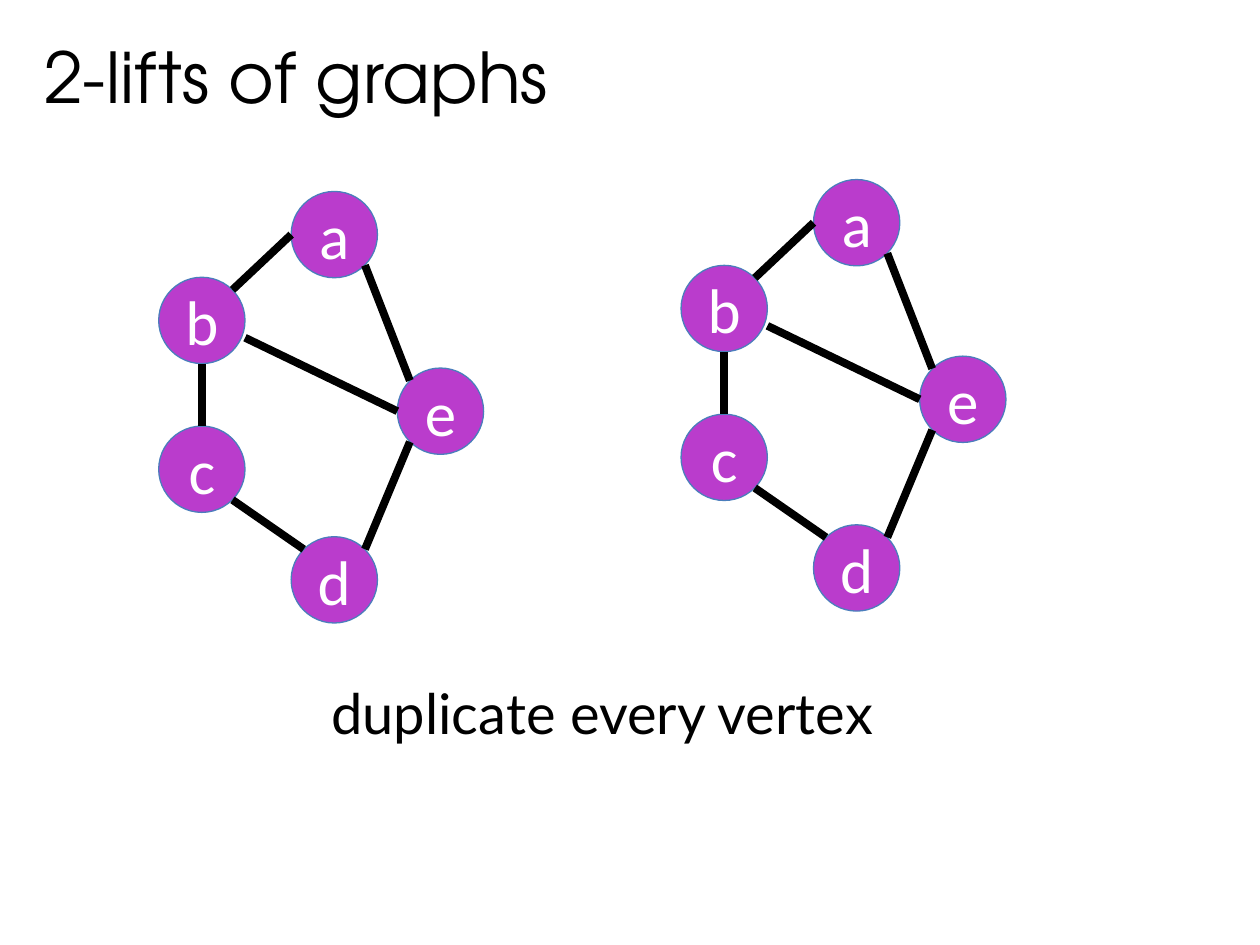
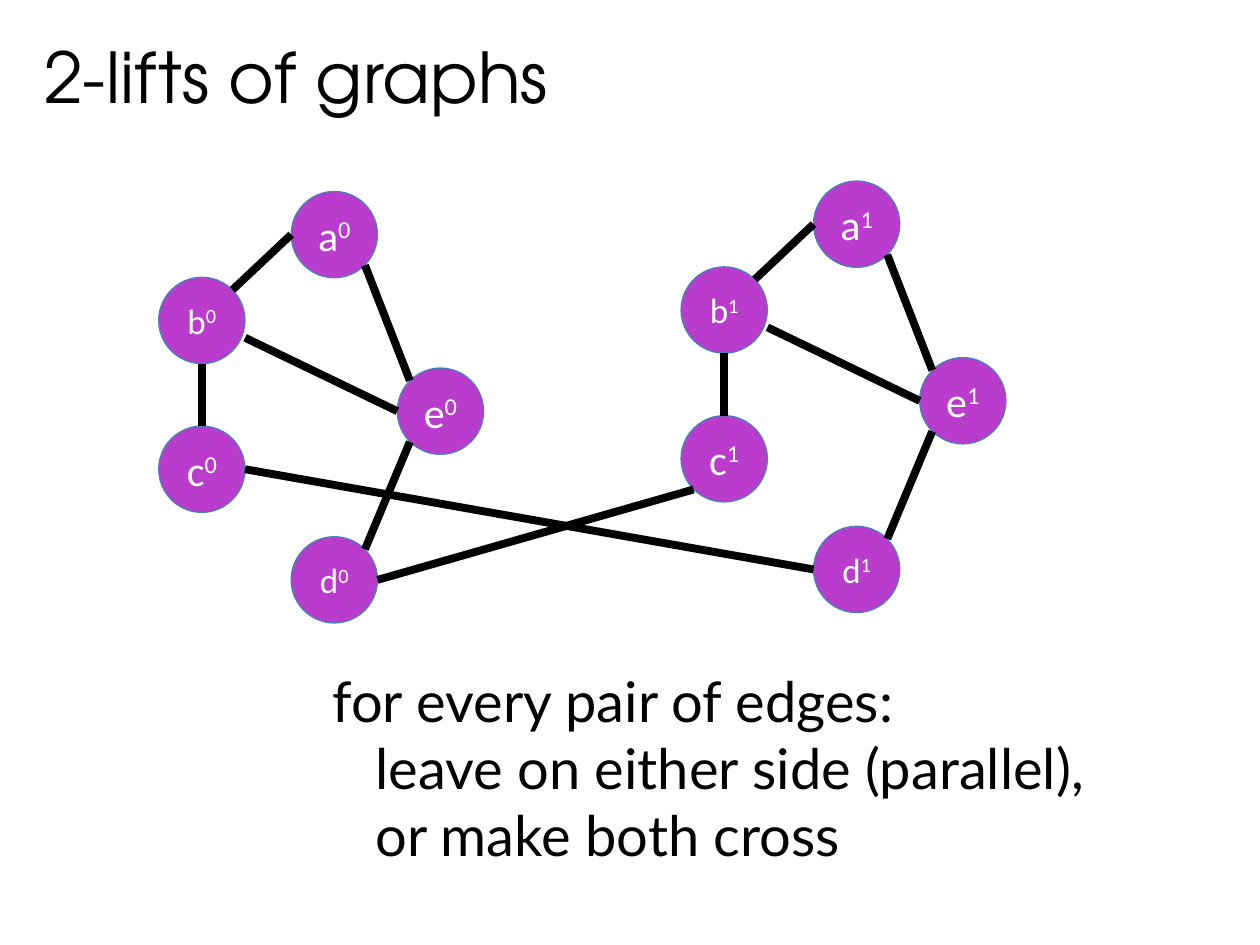
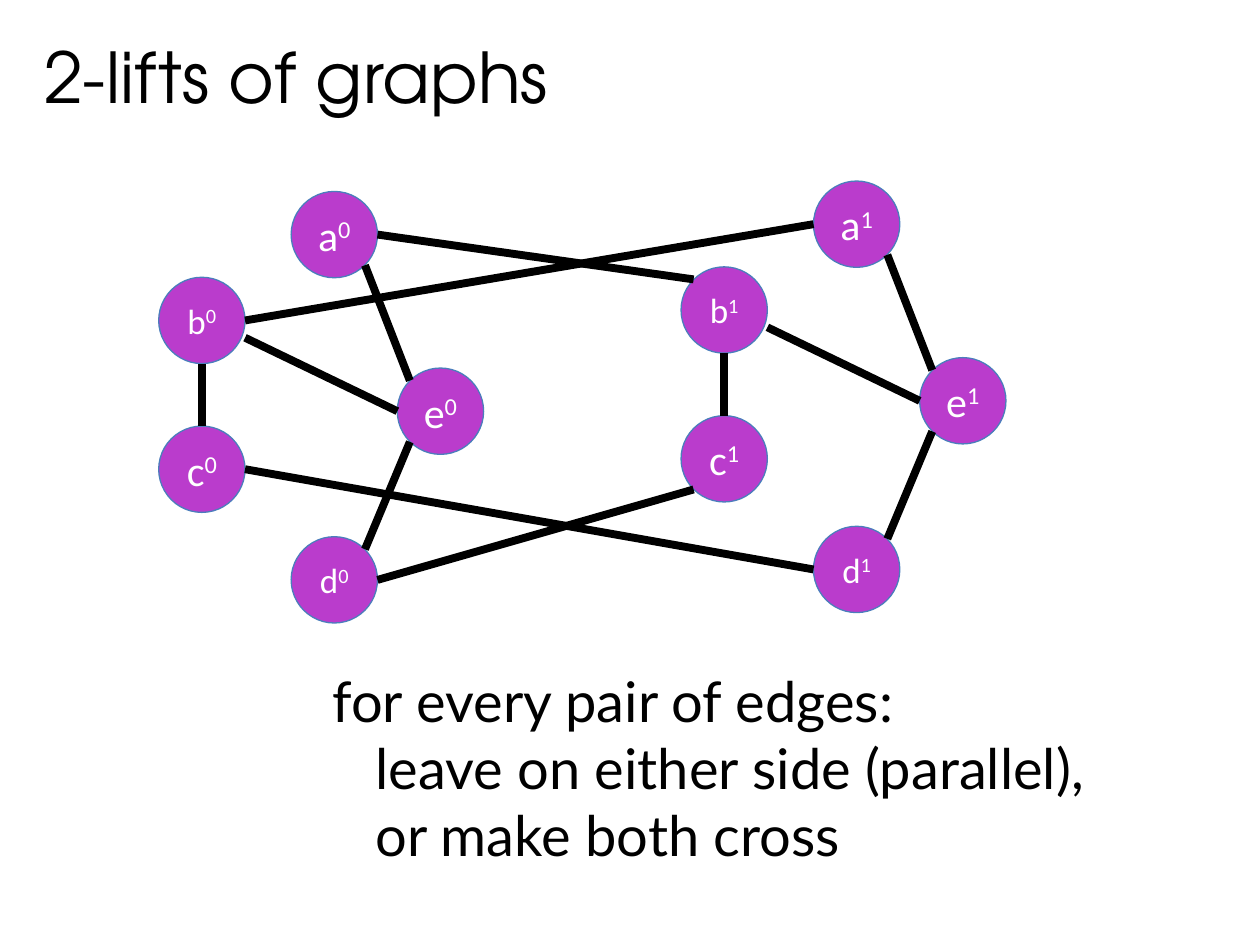
from dataclasses import dataclass

from lxml import etree
from pptx import Presentation
from pptx.dml.color import RGBColor
from pptx.enum.shapes import MSO_CONNECTOR, MSO_SHAPE
from pptx.enum.text import MSO_ANCHOR, MSO_AUTO_SIZE, PP_ALIGN
from pptx.oxml.ns import qn
from pptx.util import Cm, Pt

STRAIGHT = MSO_CONNECTOR.STRAIGHT
ELLIPSE = MSO_SHAPE.OVAL
MIDDLE = MSO_ANCHOR.MIDDLE
CENTER = PP_ALIGN.CENTER
FIT_TEXT = MSO_AUTO_SIZE.SHAPE_TO_FIT_TEXT

BLACK = RGBColor(0x00, 0x00, 0x00)
WHITE = RGBColor(0xFF, 0xFF, 0xFF)
PURPLE = RGBColor(0xBA, 0x3C, 0xCC)
BLUE = RGBColor(0x4B, 0x7E, 0xBC)

TITLE_FORMAT = {"name": "TeX Gyre Adventor", "size": Pt(40)}
CAPTION_FORMAT = {"name": "Lato", "size": Pt(32)}

DIAMETER = 1.74
RADIUS = DIAMETER / 2
CAPTION_INDENT = Cm(0.87)
COPY_SHIFT = 10.53

DIAGONAL = 0.71
TOP, BOTTOM, LEFT, RIGHT = (0, -1), (0, 1), (-1, 0), (1, 0)
UPPER_LEFT, UPPER_RIGHT = (-DIAGONAL, -DIAGONAL), (DIAGONAL, -DIAGONAL)
LOWER_LEFT, LOWER_RIGHT = (-DIAGONAL, DIAGONAL), (DIAGONAL, DIAGONAL)
RIGHT_BELOW_CENTER = (1, 0.4)


@dataclass(frozen=True)
class Vertex:
    left: float
    top: float
    indexed_size: int


@dataclass(frozen=True)
class Port:
    vertex: str
    side: tuple[float, float]


@dataclass(frozen=True)
class Edge:
    start: Port
    end: Port


@dataclass(frozen=True)
class GraphCopy:
    index: str
    dx: float = 0
    dy: float = 0


@dataclass(frozen=True)
class Crossing:
    from_second: Edge
    from_first: Edge


@dataclass(frozen=True)
class Caption:
    left: float
    top: float
    width: float
    height: float
    lines: tuple[str, ...]


@dataclass(frozen=True)
class LiftPage:
    copies: tuple[GraphCopy, GraphCopy]
    crossed: tuple[str, ...]
    caption: Caption


VERTICES = {
    "a": Vertex(5.87, 3.86, 24),
    "c": Vertex(3.2, 8.59, 24),
    "d": Vertex(5.87, 10.82, 20),
    "e": Vertex(8.01, 7.42, 24),
    "b": Vertex(3.2, 5.59, 20),
}

EDGES = {
    "ab": Edge(Port("a", LEFT), Port("b", UPPER_RIGHT)),
    "de": Edge(Port("e", LOWER_LEFT), Port("d", UPPER_RIGHT)),
    "ae": Edge(Port("a", LOWER_RIGHT), Port("e", UPPER_LEFT)),
    "bc": Edge(Port("c", TOP), Port("b", BOTTOM)),
    "cd": Edge(Port("d", UPPER_LEFT), Port("c", LOWER_RIGHT)),
    "be": Edge(Port("e", LEFT), Port("b", RIGHT_BELOW_CENTER)),
}

CROSSINGS = {
    "ab": Crossing(
        from_second=Edge(Port("a", LEFT), Port("b", RIGHT)),
        from_first=Edge(Port("a", RIGHT), Port("b", UPPER_LEFT)),
    ),
    "cd": Crossing(
        from_second=Edge(Port("d", LEFT), Port("c", RIGHT)),
        from_first=Edge(Port("d", RIGHT), Port("c", LOWER_LEFT)),
    ),
}

TITLE = Caption(0.64, 0.56, 11.38, 1.96, ("2-lifts of graphs",))
DUPLICATE = Caption(6.43, 13.56, 11.73, 1.63, ("duplicate every vertex",))
PAIRS = Caption(
    6.45, 13.31, 16.36, 4.37,
    ("for every pair of edges:", "leave on either side (parallel),", "or make both cross"),
)

PLAIN = (GraphCopy(""), GraphCopy("", COPY_SHIFT, -0.24))
INDEXED = (GraphCopy("0"), GraphCopy("1", COPY_SHIFT, -0.21))

PAGES = (
    LiftPage(PLAIN, (), DUPLICATE),
    LiftPage(INDEXED, ("cd",), PAIRS),
    LiftPage(INDEXED, ("ab", "cd"), PAIRS),
)


def add_span(para, text: str, color: RGBColor, formats: dict):
    span = para.add_run()
    span.text = text
    for name, value in formats.items():
        setattr(span.font, name, value)
    span.font.color.rgb = color
    return span


def add_caption(page, caption: Caption, formats: dict) -> None:
    place = (caption.left, caption.top, caption.width, caption.height)
    box = page.shapes.add_textbox(*map(Cm, place))
    frame = box.text_frame
    frame.word_wrap = False
    frame.auto_size = FIT_TEXT
    for number, line in enumerate(caption.lines):
        para = frame.add_paragraph() if number else frame.paragraphs[0]
        if number:
            para._p.get_or_add_pPr().set("marL", str(CAPTION_INDENT))
        add_span(para, line, BLACK, formats)


def add_vertex(shapes, name: str, vertex: Vertex, graph: GraphCopy) -> None:
    circle = shapes.add_shape(
        ELLIPSE,
        Cm(vertex.left + graph.dx), Cm(vertex.top + graph.dy),
        Cm(DIAMETER), Cm(DIAMETER),
    )
    circle.shadow.inherit = False
    circle.fill.solid()
    circle.fill.fore_color.rgb = PURPLE
    circle.line.color.rgb = BLUE
    circle.line.width = Pt(0.75)
    frame = circle.text_frame
    frame.word_wrap = False
    frame.vertical_anchor = MIDDLE
    para = frame.paragraphs[0]
    para.alignment = CENTER
    size = vertex.indexed_size if graph.index else 36
    formats = {"name": "Calibri", "size": Pt(size)}
    add_span(para, name, WHITE, formats)
    if graph.index:
        span = add_span(para, graph.index, WHITE, formats)
        span._r.get_or_add_rPr().set("baseline", "30000")


def locate(port: Port, graph: GraphCopy) -> tuple[Cm, Cm]:
    vertex = VERTICES[port.vertex]
    across, down = port.side
    return (
        Cm(vertex.left + graph.dx + RADIUS * (1 + across)),
        Cm(vertex.top + graph.dy + RADIUS * (1 + down)),
    )


def add_edge(shapes, edge: Edge, start: GraphCopy, end: GraphCopy) -> None:
    line = shapes.add_connector(STRAIGHT, *locate(edge.start, start), *locate(edge.end, end))
    line.line.color.rgb = BLACK
    line.line.width = Pt(4.5)
    etree.SubElement(line._element.spPr, qn("a:effectLst"))


def add_graph(page, graph: GraphCopy, crossed: tuple[str, ...]) -> None:
    shapes = page.shapes.add_group_shape().shapes
    for name, vertex in VERTICES.items():
        add_vertex(shapes, name, vertex, graph)
    for name, edge in EDGES.items():
        if name not in crossed:
            add_edge(shapes, edge, graph, graph)


def add_page(deck, lift: LiftPage) -> None:
    page = deck.slides.add_slide(deck.slide_layouts[6])
    add_caption(page, TITLE, TITLE_FORMAT)
    for graph in lift.copies:
        add_graph(page, graph, lift.crossed)
    first, second = lift.copies
    for name in lift.crossed:
        add_edge(page.shapes, CROSSINGS[name].from_second, second, first)
        add_edge(page.shapes, CROSSINGS[name].from_first, first, second)
    add_caption(page, lift.caption, CAPTION_FORMAT)


def main() -> None:
    deck = Presentation()
    deck.slide_width = Cm(25.4)
    deck.slide_height = Cm(19.05)
    for lift in PAGES:
        add_page(deck, lift)
    deck.save("out.pptx")


if __name__ == "__main__":
    main()
